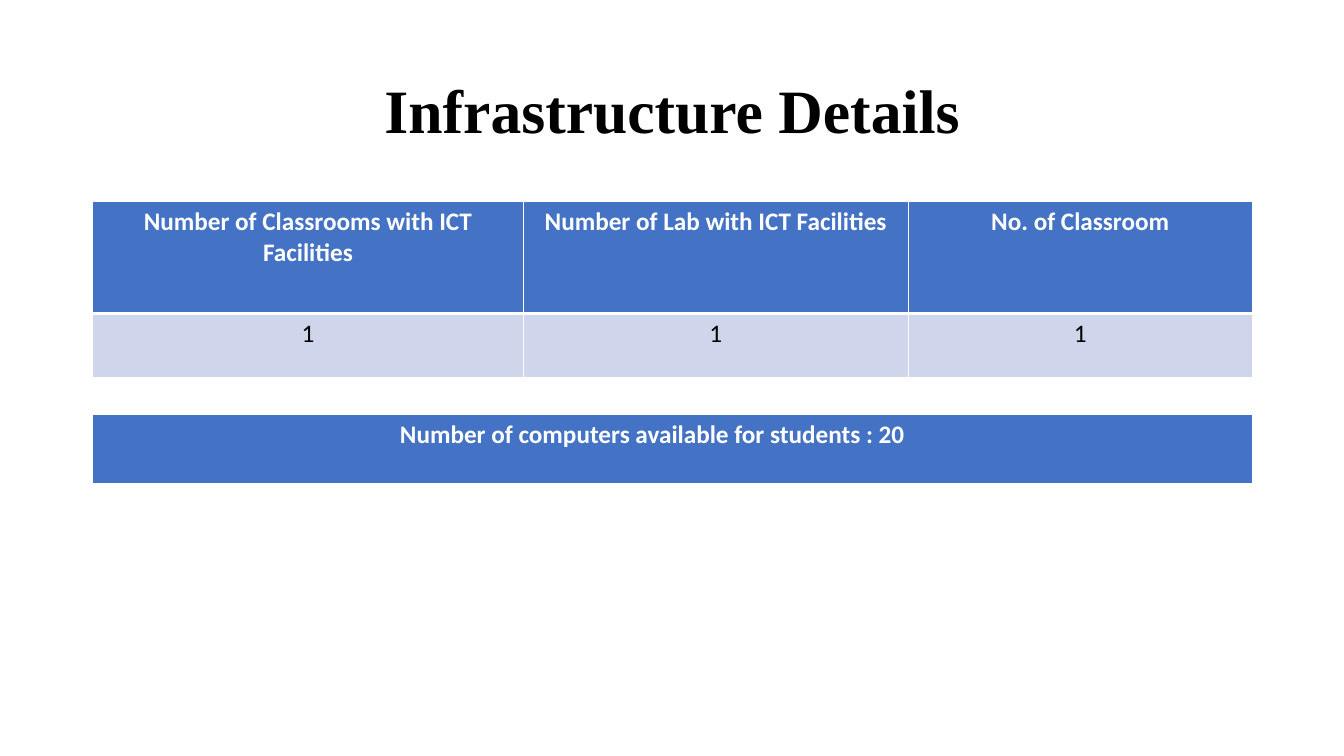
import pptx
import pptx.dml.color
import pptx.enum.text
import pptx.oxml.ns
import pptx.util
import lxml.etree

COLORS = {"title": "000000", "header": "4472C4", "value": "CFD5EA",
          "light": "FFFFFF", "dark": "000000"}
LEFT, WIDTH = 0.92, 11.5
CENTER = pptx.enum.text.PP_ALIGN.CENTER
inches = pptx.util.Inches


def rgb(name):
    return pptx.dml.color.RGBColor.from_string(COLORS[name])


def add_text(paragraph, text, font, size, color, bold):
    paragraph.alignment = CENTER
    run = paragraph.add_run()
    run.text = text
    run.font.name = font
    run.font.size = pptx.util.Pt(size)
    run.font.bold = bold
    run.font.color.rgb = rgb(color)


def add_title(slide, text):
    title = slide.shapes.title
    title.left, title.top = inches(LEFT), inches(0.4)
    title.width, title.height = inches(WIDTH), inches(1.45)
    title.text_frame.vertical_anchor = pptx.enum.text.MSO_ANCHOR.MIDDLE
    heading = title.text_frame.paragraphs[0]
    heading.line_spacing = 0.9
    add_text(heading, text, "Times New Roman", 44, "title", True)


def set_borders(cell, top, bottom):
    """White cell borders; top and bottom widths in points."""
    qn = pptx.oxml.ns.qn
    properties = cell._tc.get_or_add_tcPr()
    for side, points in (("L", 1), ("R", 1), ("T", top), ("B", bottom)):
        line = lxml.etree.SubElement(properties, qn(f"a:ln{side}"),
                                     w=str(pptx.util.Pt(points)))
        fill = lxml.etree.SubElement(line, qn("a:solidFill"))
        lxml.etree.SubElement(fill, qn("a:srgbClr"), val=COLORS["light"])


def add_table(slide, top, column_widths, row_heights, rows):
    """Table whose first row is the header."""
    table = slide.shapes.add_table(
        len(rows), len(column_widths), inches(LEFT), inches(top),
        inches(WIDTH), inches(sum(row_heights))).table
    for column, width in zip(table.columns, column_widths):
        column.width = inches(width)
    for index, (height, texts) in enumerate(zip(row_heights, rows)):
        table.rows[index].height = inches(height)
        header = index == 0
        for cell, text in zip(table.rows[index].cells, texts):
            set_borders(cell, 3 if index == 1 else 1, 3 if header else 1)
            cell.fill.solid()
            cell.fill.fore_color.rgb = rgb("header" if header else "value")
            add_text(cell.text_frame.paragraphs[0], text, "Calibri", 18,
                     "light" if header else "dark", header)
    return table


def main():
    deck = pptx.Presentation()
    deck.slide_width, deck.slide_height = inches(13.33), inches(7.5)
    slide = deck.slides.add_slide(deck.slide_layouts[5])

    add_title(slide, "Infrastructure Details")

    # Rooms
    add_table(slide, 2, [4.27, 3.82, 3.41], [1.11, 0.64], [
        ["Number of Classrooms with ICT Facilities",
         "Number of Lab with ICT Facilities", "No. of Classroom"],
        ["1", "1", "1"]])

    # Computers, with the text set slightly left of centre
    computers = add_table(slide, 4.11, [WIDTH], [0.7], [
        ["Number of computers available for students : 20"]])
    computers.cell(0, 0).margin_right = inches(0.5)

    deck.save("out.pptx")


if __name__ == "__main__":
    main()
